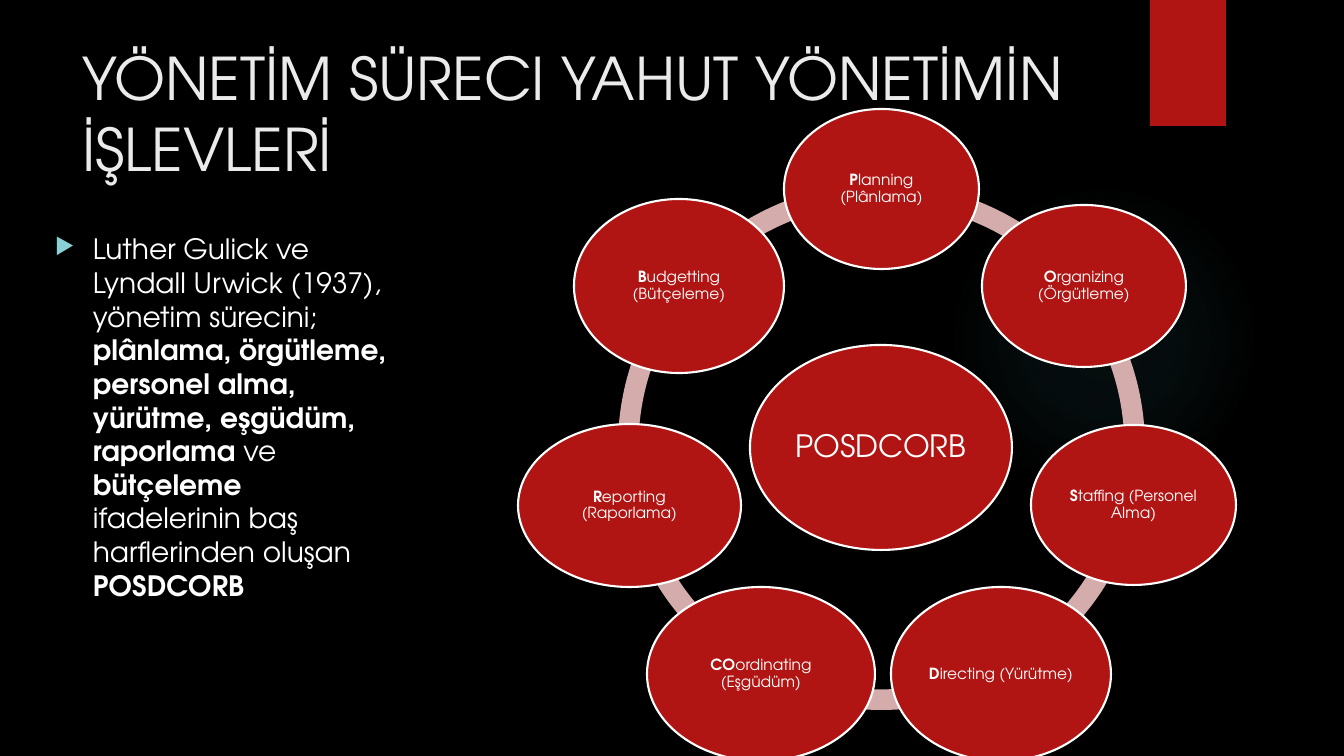
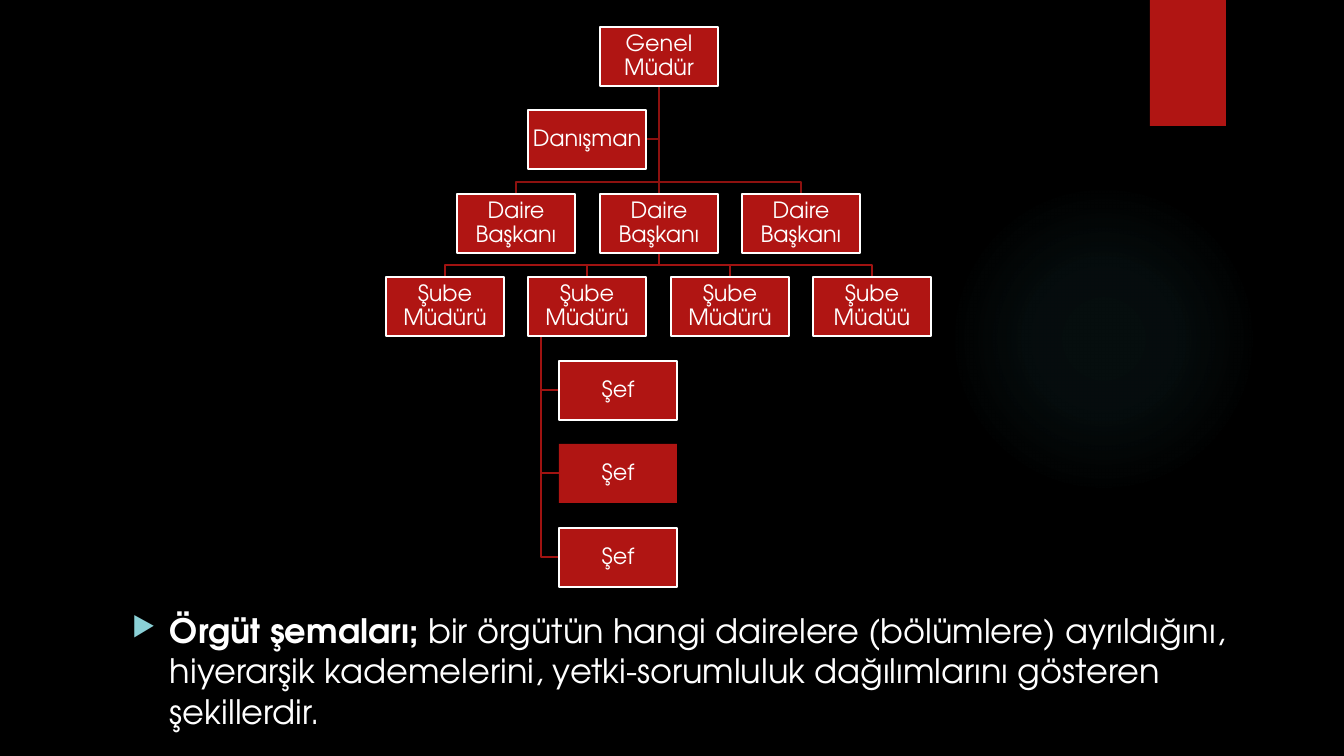
from pptx import Presentation
from pptx.dml.color import RGBColor
from pptx.enum.shapes import MSO_CONNECTOR, MSO_SHAPE
from pptx.enum.text import MSO_ANCHOR, MSO_AUTO_SIZE, PP_ALIGN
from pptx.oxml import parse_xml
from pptx.oxml.ns import nsdecls
from pptx.util import Emu, Pt
from lxml.etree import SubElement
from pptx.oxml.ns import qn

EMU_PER_PX = 914400 / 100.8
FONT = "TeX Gyre Adventor"
BLACK, WHITE, TITLE_GREY = "000000", "FFFFFF", "EBEBEB"
RED, PALE_RED = "B01513", "D4ACAB"
UPPER_LINK, LOWER_LINK = "8D110F", "A01311"
GLOW, BULLET = "50B9C1", "8AD0D6"

# bold initials, remainder, left, top, width, height; clockwise from the top
FUNCTIONS = [
    ("P", "lanning (Plânlama)", 784, 109, 195, 160),
    ("O", "rganizing (Örgütleme)", 982, 205, 204, 162),
    ("S", "taffing (Personel Alma)", 1031, 425, 205, 160),
    ("D", "irecting (Yürütme)", 891, 587, 220, 174),
    ("CO", "ordinating (Eşgüdüm)", 647, 587, 228, 174),
    ("R", "eporting (Raporlama)", 518, 424, 223, 163),
    ("B", "udgetting (Bütçeleme)", 574, 199, 210, 174),
]
RING = (618, 183, 527, 527)

BOX_WIDTH, BOX_HEIGHT = 118, 59
TRUNK_X, CHIEF_X, CHIEF_RAIL_X = 659, 618, 541
BAR_GAP = 12


def px(length):
    return Emu(round(length * EMU_PER_PX))


def box_px(*lengths):
    return [px(length) for length in lengths]


def rgb(colour):
    return RGBColor.from_string(colour)


def add_run(paragraph, text, size, colour=WHITE, bold=False):
    run = paragraph.add_run()
    run.text = text
    run.font.name = FONT
    run.font.size = Pt(size)
    run.font.color.rgb = rgb(colour)
    if bold:
        run.font.bold = True


def add_figure(slide, kind, box, fill, outline=None):
    figure = slide.shapes.add_shape(kind, *box_px(*box))
    figure.shadow.inherit = False
    figure.fill.solid()
    figure.fill.fore_color.rgb = rgb(fill)
    if outline:
        figure.line.color.rgb = rgb(outline)
        figure.line.width = Pt(1.5)
    else:
        figure.line.fill.background()
    return figure


def add_label(figure, runs, size, inset):
    """Centre (text, bold) runs inside a figure."""
    frame = figure.text_frame
    frame.word_wrap = True
    frame.vertical_anchor = MSO_ANCHOR.MIDDLE
    frame.margin_left = frame.margin_right = px(inset)
    frame.margin_top = frame.margin_bottom = px(inset)
    paragraph = frame.paragraphs[0]
    paragraph.alignment = PP_ALIGN.CENTER
    paragraph.line_spacing = 0.9
    for text, bold in runs:
        add_run(paragraph, text, size, bold=bold)


def add_bullet_text(slide, box, runs, size):
    frame = slide.shapes.add_textbox(*box_px(*box)).text_frame
    frame.word_wrap = True
    paragraph = frame.paragraphs[0]
    properties = paragraph._p.get_or_add_pPr()
    properties.set("marL", str(px(38)))
    properties.set("indent", str(-px(38)))
    colour = SubElement(properties, qn("a:buClr"))
    SubElement(colour, qn("a:srgbClr"), val=BULLET)
    SubElement(properties, qn("a:buSzPct"), val="80000")
    SubElement(properties, qn("a:buChar"), char="▶")
    for text, bold in runs:
        add_run(paragraph, text, size, bold=bold)


def add_title(slide, text):
    title = slide.shapes.title
    title.left, title.top, title.width, title.height = box_px(72, 37, 1037, 154)
    frame = title.text_frame
    frame.word_wrap = True
    frame.auto_size = MSO_AUTO_SIZE.NONE
    frame.vertical_anchor = MSO_ANCHOR.TOP
    paragraph = frame.paragraphs[0]
    paragraph.alignment = PP_ALIGN.LEFT
    add_run(paragraph, text, 42, TITLE_GREY)


def add_glow(slide):
    glow = add_figure(slide, MSO_SHAPE.OVAL, (949, 184, 310, 310), GLOW)
    stops = "".join(
        f'<a:gs pos="{position}000"><a:srgbClr val="{GLOW}">'
        f'<a:alpha val="{opacity}000"/></a:srgbClr></a:gs>'
        for position, opacity in [(0, 7), (36, 6), (69, 0)]
    )
    gradient = parse_xml(
        f'<a:gradFill {nsdecls("a")}><a:gsLst>{stops}</a:gsLst><a:path path="circle">'
        '<a:fillToRect l="50000" t="50000" r="50000" b="50000"/></a:path></a:gradFill>'
    )
    properties = glow._element.spPr
    properties.replace(properties.find(qn("a:solidFill")), gradient)


def new_slide(deck, layout_index):
    """Add a slide with the shared glow and red tab."""
    slide = deck.slides.add_slide(deck.slide_layouts[layout_index])
    add_glow(slide)
    add_figure(slide, MSO_SHAPE.RECTANGLE, (1150, 0, 76, 126), RED)
    return slide


def add_ring(slide, count):
    """Draw a ring of equal arcs, starting at the top."""
    step = 360 / count
    for index in range(count):
        arc = add_figure(slide, MSO_SHAPE.BLOCK_ARC, RING, PALE_RED)
        start = 270 + index * step
        # An adjustment is a raw value over 100000; an angle is 60000 per degree.
        arc.adjustments[0] = start % 360 * 0.6
        arc.adjustments[1] = (start + step) % 360 * 0.6
        arc.adjustments[2] = 0.039


def add_link(slide, colour, *points):
    """Draw a straight connector or a bent line through the points."""
    points = [box_px(*point) for point in points]
    if len(points) == 2:
        link = slide.shapes.add_connector(MSO_CONNECTOR.STRAIGHT, *points[0], *points[1])
        SubElement(link._element.spPr, qn("a:effectLst"))
    else:
        builder = slide.shapes.build_freeform(*points[0])
        builder.add_line_segments(points[1:], close=False)
        link = builder.convert_to_shape()
        link.fill.background()
        link.shadow.inherit = False
    link.line.color.rgb = rgb(colour)
    link.line.width = Pt(1.5)


def column_x(half_steps):
    return TRUNK_X + 285 * half_steps // 4


def row_top(row):
    return 27 + 167 * row // 2


def add_post(slide, centre_x, row, text, outline=WHITE):
    box = (centre_x - BOX_WIDTH // 2, row_top(row), BOX_WIDTH, BOX_HEIGHT)
    post = add_figure(slide, MSO_SHAPE.RECTANGLE, box, RED, outline)
    add_label(post, [(text, False)], 16, 1)


def link_below(slide, colour, parent_row, child_x, child_row):
    """Link the trunk under a row to a post, by way of a bar above the post."""
    start = (TRUNK_X, row_top(parent_row) + BOX_HEIGHT)
    end = (child_x, row_top(child_row))
    bar_y = end[1] - BAR_GAP
    bends = [] if child_x == TRUNK_X else [(TRUNK_X, bar_y), (child_x, bar_y)]
    add_link(slide, colour, start, *bends, end)


def link_beside(slide, colour, rail_x, parent_row, side_x, row):
    """Link a vertical rail to the side of a post."""
    middle = row_top(row) + BOX_HEIGHT // 2
    start = (rail_x, row_top(parent_row) + BOX_HEIGHT)
    add_link(slide, colour, start, (rail_x, middle), (side_x, middle))


def build_functions_slide(deck):
    slide = new_slide(deck, 5)
    add_title(slide, "YÖNETİM SÜRECI YAHUT YÖNETİMİN İŞLEVLERİ")
    add_bullet_text(slide, (45, 227, 354, 463), [
        ("Luther Gulick ve Lyndall Urwick (1937), yönetim sürecini; ", False),
        ("plânlama, örgütleme, personel alma, yürütme, eşgüdüm, raporlama ", True),
        ("ve", False),
        (" bütçeleme ", True),
        ("ifadelerinin baş harflerinden oluşan ", False),
        ("POSDCORB", True),
    ], 20)
    add_ring(slide, len(FUNCTIONS))
    hub = add_figure(slide, MSO_SHAPE.OVAL, (750, 345, 262, 205), RED, WHITE)
    add_label(hub, [("POSDCORB", False)], 22, 3)
    for initials, remainder, *box in FUNCTIONS:
        function = add_figure(slide, MSO_SHAPE.OVAL, box, RED, WHITE)
        add_label(function, [(initials, True), (remainder, False)], 11, 2)


def build_organisation_slide(deck):
    slide = new_slide(deck, 6)
    add_bullet_text(slide, (122, 605, 1135, 127), [
        ("Örgüt şemaları; ", True),
        ("bir örgütün hangi dairelere (bölümlere) ayrıldığını, hiyerarşik kademelerini, "
         "yetki-sorumluluk dağılımlarını gösteren şekillerdir.", False),
    ], 24)

    adviser_x = column_x(-1)
    departments = [column_x(step) for step in (-2, 0, 2)]
    branches = [column_x(step) for step in (-3, -1, 1, 3)]
    branch_names = ["Şube Müdürü"] * 3 + ["Şube Müdüü"]
    chief_outlines = {4: WHITE, 5: None, 6: WHITE}

    link_beside(slide, UPPER_LINK, TRUNK_X, 0, adviser_x + BOX_WIDTH // 2, 1)
    for x in departments:
        link_below(slide, UPPER_LINK, 0, x, 2)
    for x in branches:
        link_below(slide, LOWER_LINK, 2, x, 3)
    for row in chief_outlines:
        link_beside(slide, LOWER_LINK, CHIEF_RAIL_X, 3, CHIEF_X - BOX_WIDTH // 2, row)

    add_post(slide, TRUNK_X, 0, "Genel Müdür")
    add_post(slide, adviser_x, 1, "Danışman")
    for x in departments:
        add_post(slide, x, 2, "Daire Başkanı")
    for x, name in zip(branches, branch_names):
        add_post(slide, x, 3, name)
    for row, outline in chief_outlines.items():
        add_post(slide, CHIEF_X, row, "Şef", outline)


def main():
    deck = Presentation()
    deck.slide_width, deck.slide_height = box_px(1344, 756)
    background = deck.slide_master.background.fill
    background.solid()
    background.fore_color.rgb = rgb(BLACK)
    build_functions_slide(deck)
    build_organisation_slide(deck)
    deck.save("out.pptx")


if __name__ == "__main__":
    main()
